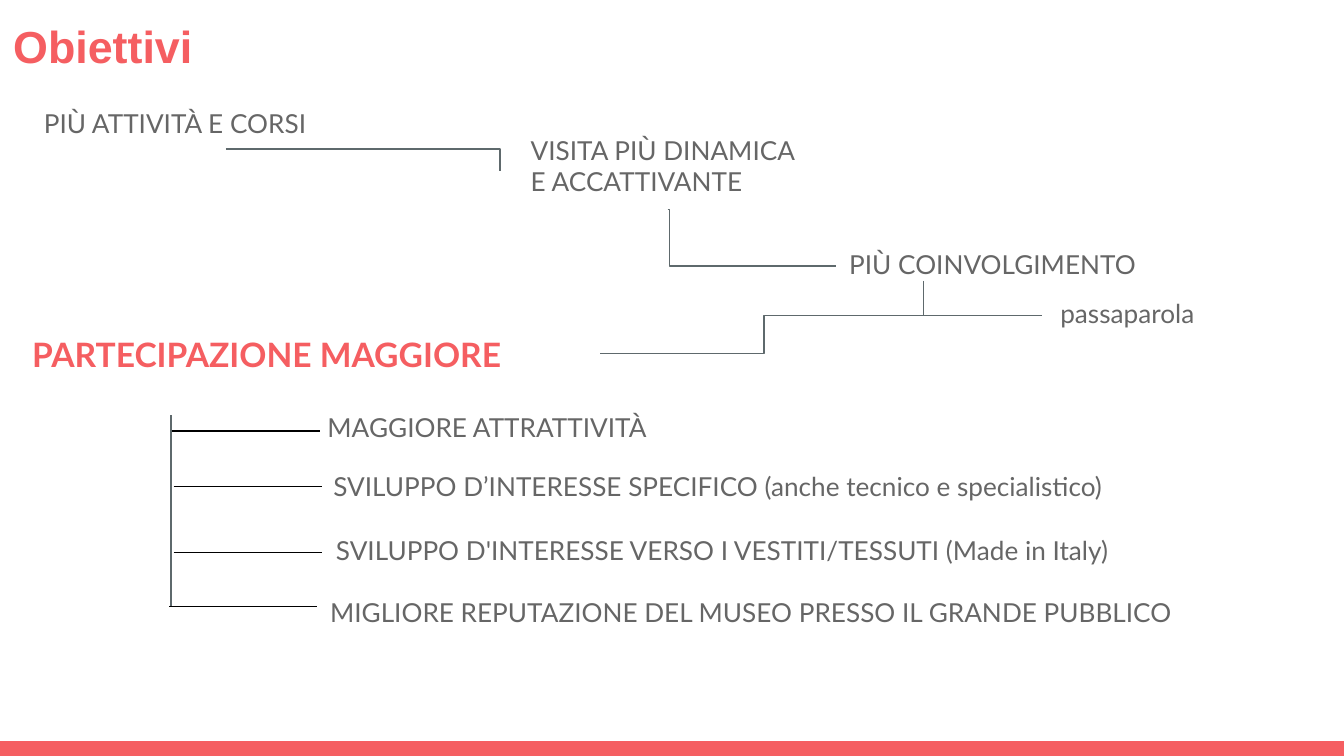
from dataclasses import dataclass

from lxml import etree
from pptx import Presentation
from pptx.dml.color import RGBColor
from pptx.enum.shapes import MSO_CONNECTOR, MSO_SHAPE
from pptx.enum.text import MSO_ANCHOR, MSO_AUTO_SIZE, PP_ALIGN
from pptx.oxml.ns import qn
from pptx.util import Cm, Pt

STRAIGHT, ELBOW = MSO_CONNECTOR.STRAIGHT, MSO_CONNECTOR.ELBOW
RECTANGLE = MSO_SHAPE.RECTANGLE
TOP, MIDDLE = MSO_ANCHOR.TOP, MSO_ANCHOR.MIDDLE
NO_AUTOFIT = MSO_AUTO_SIZE.NONE
LEFT = PP_ALIGN.LEFT
TITLE_ONLY = 5


@dataclass(frozen=True)
class Theme:
    accent: RGBColor = RGBColor(0xF5, 0x5E, 0x61)
    text: RGBColor = RGBColor(0x66, 0x66, 0x66)
    flow: RGBColor = RGBColor(0x5E, 0x69, 0x6C)
    branch: RGBColor = RGBColor(0, 0, 0)
    title_font: str = "Arial"
    body_font: str = "Lato"
    title_size: Pt = Pt(24)
    key_size: Pt = Pt(18)
    body_size: Pt = Pt(14)
    line_width: Pt = Pt(0.75)
    inset: Cm = Cm(0.25)


THEME = Theme()


# All positions below are in centimetres
@dataclass(frozen=True)
class Label:
    text: str
    left: float
    top: float
    width: float
    height: float
    spacing: float = 1.0
    key: bool = False


@dataclass(frozen=True)
class Link:
    start: tuple[float, float]
    end: tuple[float, float]
    bend: int | None = None  # thousandths of a percent; None means one corner


@dataclass(frozen=True)
class Goal:
    text: str
    left: float
    top: float
    branch_left: float
    branch_y: float


SLIDE_WIDTH, SLIDE_HEIGHT, BAR_HEIGHT = 25.4, 14.29, 0.28
GOAL_WIDTH, GOAL_HEIGHT, BRANCH_LENGTH = 19, 1.3, 2.8
TRUNK_X, TRUNK_TOP = 3.23, 7.85

STEPS = [
    Label("PIÙ ATTIVITÀ E CORSI", 0.58, 1.7, 7.37, 1.3, spacing=1.15),
    Label("VISITA PIÙ DINAMICA E ACCATTIVANTE", 9.78, 2.29, 5.82, 3.78),
    Label("PIÙ COINVOLGIMENTO", 15.8, 4.45, 7.75, 3.4),
    Label("passaparola", 19.79, 5.38, 4.85, 1.73),
    Label("PARTECIPAZIONE MAGGIORE", 0.36, 6.07, 11.38, 1.6, key=True),
]

LINKS = [
    Link((4.27, 2.82), (9.45, 3.23)),
    Link((12.62, 3.96), (15.8, 5.03), bend=1100),
    Link((17.45, 5.31), (19.69, 5.97), bend=0),
    Link((17.53, 5.97), (11.35, 6.68), bend=50000),
]

GOALS = [
    Goal("MAGGIORE ATTRATTIVITÀ", 5.94, 7.52, 3.25, 8.15),
    Goal("SVILUPPO D’INTERESSE SPECIFICO (anche tecnico e specialistico)",
         6.05, 8.64, 3.28, 9.19),
    Goal("SVILUPPO D'INTERESSE VERSO I VESTITI/TESSUTI (Made in Italy)",
         6.1, 9.86, 3.28, 10.44),
    Goal("MIGLIORE REPUTAZIONE DEL MUSEO PRESSO IL GRANDE PUBBLICO",
         5.99, 11.02, 3.2, 11.46),
]


def write(shape, text: str, font_name: str, size: Pt, color: RGBColor,
          bold: bool = False, spacing: float = 1.0, anchor=TOP) -> None:
    frame = shape.text_frame
    frame.text = text
    frame.word_wrap = True
    frame.auto_size = NO_AUTOFIT
    frame.vertical_anchor = anchor
    frame.margin_left = frame.margin_right = THEME.inset
    frame.margin_top = frame.margin_bottom = THEME.inset
    paragraph = frame.paragraphs[0]
    paragraph.alignment = LEFT
    paragraph.line_spacing = spacing
    font = paragraph.runs[0].font
    font.name, font.size, font.bold = font_name, size, bold
    font.color.rgb = color


def add_label(slide, label: Label) -> None:
    box = slide.shapes.add_textbox(Cm(label.left), Cm(label.top),
                                   Cm(label.width), Cm(label.height))
    write(box, label.text, THEME.body_font,
          THEME.key_size if label.key else THEME.body_size,
          THEME.accent if label.key else THEME.text,
          bold=label.key, spacing=label.spacing)


def add_line(slide, kind, start: tuple[float, float],
             end: tuple[float, float], color: RGBColor):
    line = slide.shapes.add_connector(kind, *map(Cm, start + end))
    line.line.color.rgb = color
    line.line.width = THEME.line_width
    etree.SubElement(line._element.spPr, qn("a:effectLst"))
    return line


def add_link(slide, link: Link) -> None:
    elbow = add_line(slide, ELBOW, link.start, link.end, THEME.flow)
    geometry = elbow._element.spPr.find(qn("a:prstGeom"))
    if link.bend is None:
        geometry.set("prst", "bentConnector2")
    else:
        adjustments = geometry.find(qn("a:avLst"))
        etree.SubElement(adjustments, qn("a:gd"), name="adj1",
                         fmla=f"val {link.bend}")


def add_goal(slide, goal: Goal) -> None:
    add_line(slide, STRAIGHT, (goal.branch_left, goal.branch_y),
             (goal.branch_left + BRANCH_LENGTH, goal.branch_y), THEME.branch)
    add_label(slide, Label(goal.text, goal.left, goal.top,
                           GOAL_WIDTH, GOAL_HEIGHT))


def main() -> None:
    presentation = Presentation()
    presentation.slide_width = Cm(SLIDE_WIDTH)
    presentation.slide_height = Cm(SLIDE_HEIGHT)
    slide = presentation.slides.add_slide(
        presentation.slide_layouts[TITLE_ONLY])

    # Title
    title = slide.shapes.title
    title.left, title.top = Cm(0), Cm(0)
    title.width, title.height = Cm(23.67), Cm(1.73)
    write(title, "Obiettivi", THEME.title_font, THEME.title_size,
          THEME.accent, bold=True, anchor=MIDDLE)

    # Bar along the bottom edge
    bar = slide.shapes.add_shape(RECTANGLE, Cm(0), Cm(SLIDE_HEIGHT - BAR_HEIGHT),
                                 Cm(SLIDE_WIDTH), Cm(BAR_HEIGHT))
    bar.shadow.inherit = False
    bar.fill.solid()
    bar.fill.fore_color.rgb = THEME.accent
    bar.line.fill.background()

    # Steps leading to more participation
    for step in STEPS:
        add_label(slide, step)
    for link in LINKS:
        add_link(slide, link)

    # Goals branching off one trunk
    add_line(slide, STRAIGHT, (TRUNK_X, TRUNK_TOP),
             (TRUNK_X, GOALS[-1].branch_y), THEME.flow)
    for goal in GOALS:
        add_goal(slide, goal)

    presentation.save("out.pptx")


if __name__ == "__main__":
    main()
